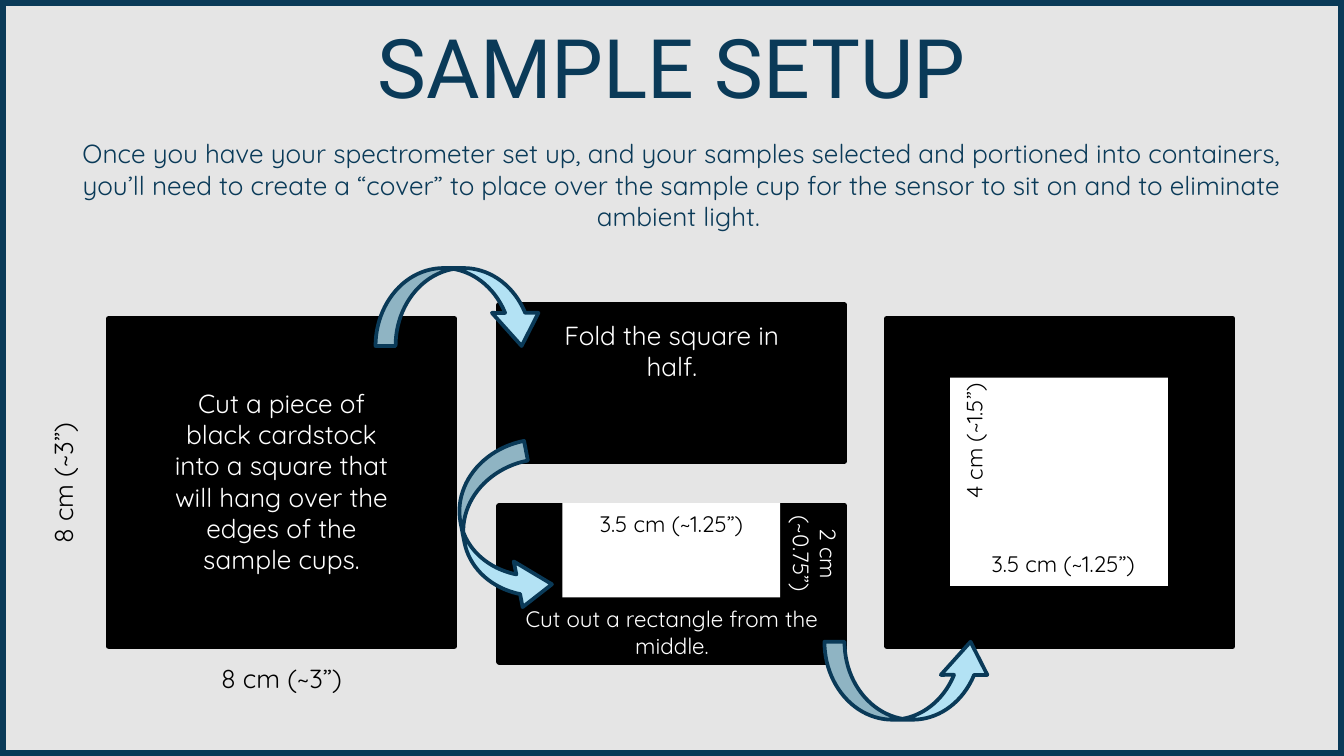
from dataclasses import dataclass

from pptx import Presentation
from pptx.dml.color import RGBColor
from pptx.enum.shapes import MSO_SHAPE
from pptx.enum.text import MSO_ANCHOR, MSO_AUTO_SIZE, PP_ALIGN
from pptx.oxml.ns import qn
from pptx.shapes.autoshape import Shape
from pptx.slide import Slide
from pptx.util import Inches, Pt

RECTANGLE = MSO_SHAPE.RECTANGLE
CURVED_ARROW = MSO_SHAPE.CURVED_UP_ARROW
CENTER, RIGHT = PP_ALIGN.CENTER, PP_ALIGN.RIGHT
MIDDLE = MSO_ANCHOR.MIDDLE
GROW, FIXED = MSO_AUTO_SIZE.SHAPE_TO_FIT_TEXT, MSO_AUTO_SIZE.NONE

CELL = Inches(0.1)
COLUMNS, ROWS = 100, 56.25


@dataclass(frozen=True)
class Theme:
    navy: str = "0A3A58"
    sky: str = "B3E2F4"
    paper: str = "E5E5E5"
    black: str = "000000"
    white: str = "FFFFFF"
    heading_font: str = "Roboto"
    body_font: str = "Quicksand"
    heading: int = 44
    body: int = 14
    small: int = 12
    frame_line: int = 6
    card_line: int = 3
    arrow_line: int = 2


THEME = Theme()


@dataclass(frozen=True)
class Area:
    column: float
    row: float
    columns: float
    rows: float

    def emu(self) -> tuple[int, ...]:
        return tuple(round(cells * CELL) for cells in
                     (self.column, self.row, self.columns, self.rows))


@dataclass(frozen=True)
class Label:
    area: Area
    text: str
    color: str = THEME.black
    size: int = THEME.body
    font: str = THEME.body_font
    align: PP_ALIGN = CENTER
    turn: int = 0


@dataclass(frozen=True)
class Arrow:
    column: float
    row: float
    turn: int = 0
    flipped: bool = False


def rgb(color: str) -> RGBColor:
    return RGBColor.from_string(color)


def draw_shape(slide: Slide, kind: MSO_SHAPE, area: Area, fill: str = "",
               line: str = "", line_width: float = 0) -> Shape:
    shape = slide.shapes.add_shape(kind, *area.emu())
    shape.shadow.inherit = False
    if fill:
        shape.fill.solid()
        shape.fill.fore_color.rgb = rgb(fill)
    else:
        shape.fill.background()
    if line:
        shape.line.color.rgb = rgb(line)
        shape.line.width = Pt(line_width)
    else:
        shape.line.fill.background()
    return shape


def draw_card(slide: Slide, area: Area) -> None:
    draw_shape(slide, RECTANGLE, area, THEME.black, THEME.black, THEME.card_line)


def draw_label(slide: Slide, label: Label) -> Shape:
    box = slide.shapes.add_textbox(*label.area.emu())
    box.rotation = label.turn
    frame = box.text_frame
    frame.word_wrap = True
    frame.auto_size = GROW
    paragraph = frame.paragraphs[0]
    paragraph.alignment = label.align
    run = paragraph.add_run()
    run.text = label.text
    run.font.name = label.font
    run.font.size = Pt(label.size)
    run.font.color.rgb = rgb(label.color)
    return box


def draw_title(slide: Slide, label: Label) -> None:
    frame = draw_label(slide, label).text_frame
    frame.word_wrap = False
    frame.auto_size = FIXED
    frame.vertical_anchor = MIDDLE
    frame.margin_top = frame.margin_bottom = CELL


def draw_arrow(slide: Slide, arrow: Arrow) -> None:
    shape = draw_shape(slide, CURVED_ARROW, Area(arrow.column, arrow.row, 12.6, 5.8),
                       THEME.sky, THEME.navy, THEME.arrow_line)
    for index, share in enumerate((0.257, 0.597, 0.425)):
        shape.adjustments[index] = share
    shape.rotation = arrow.turn
    if arrow.flipped:
        shape.element.spPr.find(qn("a:xfrm")).set("flipV", "1")


def main() -> None:
    deck = Presentation()
    deck.slide_width = COLUMNS * CELL
    deck.slide_height = round(ROWS * CELL)
    slide = deck.slides.add_slide(deck.slide_layouts[6])
    slide.background.fill.solid()
    slide.background.fill.fore_color.rgb = rgb(THEME.paper)

    draw_title(slide, Label(Area(25.5, 0.05, 49, 9.7), "SAMPLE SETUP", THEME.navy,
                            THEME.heading, THEME.heading_font))
    draw_label(slide, Label(
        Area(3.05, 9.75, 95.4, 8.1),
        "Once you have your spectrometer set up, and your samples selected and "
        "portioned into containers, you’ll need to create a “cover” to place over "
        "the sample cup for the sensor to sit on and to eliminate ambient light. ",
        THEME.navy))
    draw_shape(slide, RECTANGLE, Area(0, 0, COLUMNS, ROWS),
               line=THEME.navy, line_width=THEME.frame_line)

    card_width, square_height, half_height = 25.7, 24.4, 11.6
    cut_column, fold_column, finished_column = 8.1, 37.15, 66
    square_row, fold_row, window_row = 23.7, 22.7, 37.65
    for card in (
        Area(cut_column, square_row, card_width, square_height),
        Area(fold_column, fold_row, card_width, half_height),
        Area(fold_column, window_row, card_width, half_height),
        Area(finished_column, square_row, card_width, square_height),
    ):
        draw_card(slide, card)

    opening_width, inset, opening_row = 16.2, 4.7, 37.45
    for opening in (
        Area(fold_column + inset, opening_row, opening_width, 7),
        Area(finished_column + inset, 28.1, opening_width, 15.5),
    ):
        draw_shape(slide, RECTANGLE, opening, THEME.white)

    side, opening_side = "8 cm (~3”)", "3.5 cm (~1.25”)"
    small = THEME.small
    for label in (
        Label(Area(13.95, 48.8, 14, 3.4), side),
        Label(Area(-2.3, 34.25, 14, 3.4), side, turn=270),
        Label(Area(11.25, 28.3, 19.4, 15.1),
              "Cut a piece of black cardstock into a square that will hang over "
              "the edges of the sample cups.", THEME.white),
        Label(Area(40.3, 23.25, 19.4, 5.7), "Fold the square in half.", THEME.white),
        Label(Area(fold_column, 44.55, card_width, 5),
              "Cut out a rectangle from the middle.", THEME.white, small),
        Label(Area(fold_column + inset, opening_row, opening_width, 3),
              opening_side, size=small),
        Label(Area(56.3, 38.7, 8.7, 5), "2 cm (~0.75”)", THEME.white, small, turn=90),
        Label(Area(71, 40.45, opening_width, 3), opening_side, size=small),
        Label(Area(64.4, 34.1, 16.1, 3), "4 cm (~1.5”)", size=small,
              align=RIGHT, turn=270),
    ):
        draw_label(slide, label)

    for arrow in (
        Arrow(27.95, 19.95, flipped=True),
        Arrow(31.05, 36.65, turn=79),
        Arrow(61.35, 47.75),
    ):
        draw_arrow(slide, arrow)

    deck.save("out.pptx")


if __name__ == "__main__":
    main()
